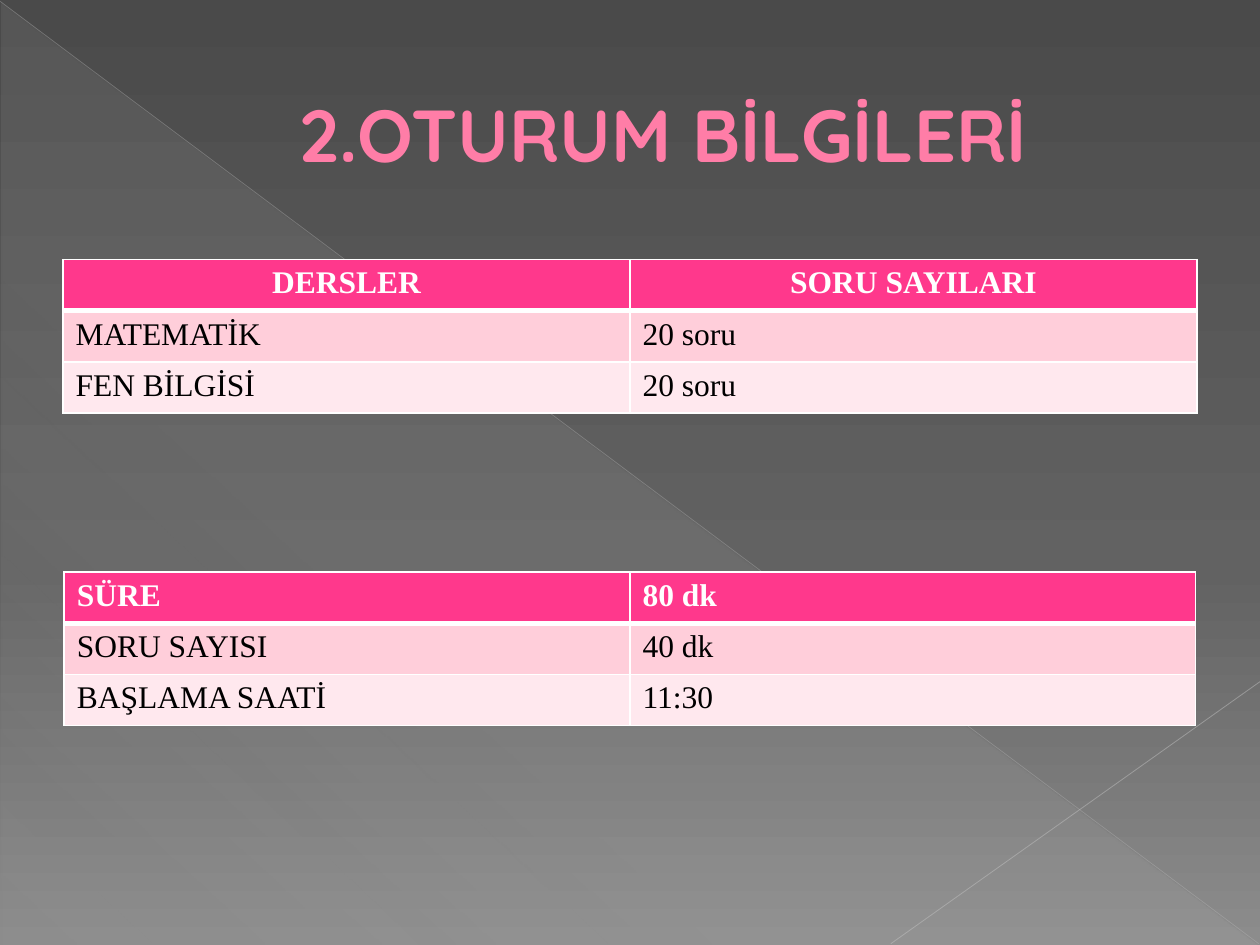
from copy import deepcopy
from pptx import Presentation
from pptx.dml.color import RGBColor as Rgb
from pptx.enum.shapes import MSO_CONNECTOR as Conn, MSO_SHAPE as Shape
from pptx.enum.text import MSO_ANCHOR as Anchor, PP_ALIGN as Align
from pptx.oxml.ns import qn
from pptx.oxml.xmlchemy import OxmlElement as Node
from pptx.util import Inches, Pt

INK = {"title": "FF7DA7", "edge": "B12761", "white": "FFFFFF", "black": "000000",
       "head": "FF388C", "odd": "FFCEDA", "even": "FFE8EE", "glow": "D2D2D2",
       "top": "4A4A4A", "mid": "626262", "low": "8C8C8C",
       "fall": "BFBFBF", "rise": "C6C6C6"}
TITLE = "2.OTURUM BİLGİLERİ"
TABLES = [
    {"left": 0.5, "top": 2.06, "wide": 9, "align": Align.CENTER,
     "rows": [("DERSLER", "SORU SAYILARI"), ("MATEMATİK", "20 soru"), ("FEN BİLGİSİ", "20 soru")]},
    {"left": 0.51, "top": 4.54, "wide": 8.98, "align": Align.LEFT,
     "rows": [("SÜRE", "80 dk"), ("SORU SAYISI", "40 dk"), ("BAŞLAMA SAATİ", "11:30")]},
]
SKY = [(0, "top", 100), (60, "mid", 100), (100, "low", 100)]
GLOW = [(0, "glow", 10), (70, "glow", 8), (100, "glow", 1)]
LINES = [((0, 0.01), (9.99, 7.49), "fall", 0.39, 35),
         ((10, 5.41), (7.07, 7.49), "rise", 0.47, 45)]
ROW = 1.22 / 3


def fade(clr, pct):
    if pct < 100:
        alpha = Node("a:alpha")
        alpha.set("val", str(pct * 1000))
        clr.append(alpha)


def blend(fill, root, stops, angle):
    fill.gradient()
    grad = next(root.iter(qn("a:gradFill")))
    grad.find(qn("a:lin")).set("ang", str(angle * 60000))
    group = grad.find(qn("a:gsLst"))
    group.append(deepcopy(group[-1]))
    for stop, node, (pos, name, pct) in zip(fill.gradient_stops, group, stops):
        stop.position = pos / 100
        stop.color.rgb = Rgb.from_string(INK[name])
        clr = node.find(qn("a:srgbClr"))
        for kid in list(clr):
            clr.remove(kid)
        fade(clr, pct)


def stroke(tag, size, name):
    line, fill, clr = Node(tag), Node("a:solidFill"), Node("a:srgbClr")
    line.set("w", str(Pt(size)))
    clr.set("val", INK[name])
    fill.append(clr)
    line.append(fill)
    return line


def style(par, font, size, name, bold):
    for run in par.runs:
        run.font.name, run.font.size, run.font.bold = font, Pt(size), bold
        run.font.color.rgb = Rgb.from_string(INK[name])


def draw_back(slide):
    blend(slide.background.fill, slide.element, SKY, 90)
    wedge = slide.shapes.add_shape(Shape.RIGHT_TRIANGLE, Inches(0.01), Inches(0.02),
                                   Inches(9.98), Inches(7.48))
    wedge.shadow.inherit = False
    wedge.line.fill.background()
    blend(wedge.fill, wedge.element, GLOW, 133)
    for start, end, name, size, pct in LINES:
        ends = [Inches(v) for v in start + end]
        line = slide.shapes.add_connector(Conn.STRAIGHT, *ends)
        line.line.width = Pt(size)
        line.line.color.rgb = Rgb.from_string(INK[name])
        fade(next(line.element.iter(qn("a:srgbClr"))), pct)
        line.element.spPr.append(Node("a:effectLst"))


def draw_title(slide):
    box = slide.shapes.add_textbox(Inches(0.5), Inches(0.29), Inches(9), Inches(1.53))
    frame = box.text_frame
    frame.word_wrap = True
    frame.vertical_anchor = Anchor.MIDDLE
    frame.text = TITLE
    par = frame.paragraphs[0]
    par.alignment = Align.CENTER
    style(par, "Quicksand", 42, "title", True)
    par._p.get_or_add_pPr().set("marL", str(Inches(0.53)))
    par.runs[0].font._element.insert(0, stroke("a:ln", 0.5, "edge"))


def draw_table(slide, item):
    rows = item["rows"]
    count = len(rows[0])
    table = slide.shapes.add_table(len(rows), count, Inches(item["left"]), Inches(item["top"]),
                                   Inches(item["wide"]), Inches(ROW * len(rows))).table
    for col in table.columns:
        col.width = Inches(item["wide"] / count)
    for r, texts in enumerate(rows):
        table.rows[r].height = Inches(ROW)
        for c, text in enumerate(texts):
            cell = table.cell(r, c)
            cell.text = text
            par = cell.text_frame.paragraphs[0]
            par.alignment = Align.LEFT if r else item["align"]
            style(par, "Times New Roman", 18, "black" if r else "white", r == 0)
            cell.fill.solid()
            cell.fill.fore_color.rgb = Rgb.from_string(INK[("head", "odd", "even")[r]])
            sizes = {"L": 1, "R": 1, "T": 3 if r == 1 else 1, "B": 1 if r else 3}
            for spot, (side, size) in enumerate(sizes.items()):
                cell._tc.tcPr.insert(spot, stroke("a:ln" + side, size, "white"))


def main():
    """Build the second session slide with its two tables."""
    deck = Presentation()
    deck.slide_width, deck.slide_height = Inches(10), Inches(7.5)
    slide = deck.slides.add_slide(deck.slide_layouts[6])
    draw_back(slide)
    draw_title(slide)
    for item in TABLES:
        draw_table(slide, item)
    deck.save("out.pptx")


if __name__ == "__main__":
    main()
